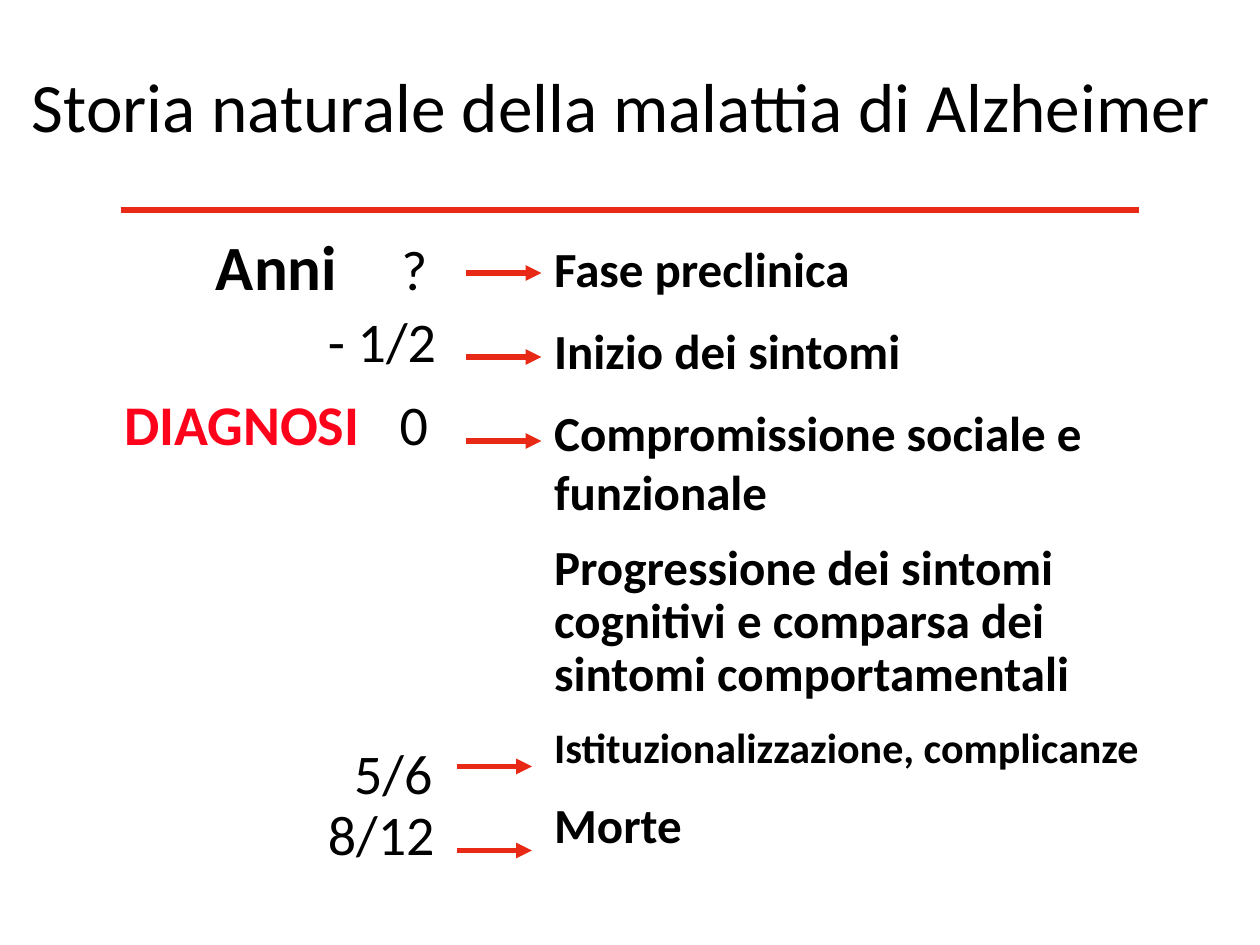
from dataclasses import dataclass

import pptx
import pptx.dml.color
import pptx.enum.shapes
import pptx.enum.text
import pptx.oxml.ns
import pptx.util
from lxml import etree

Pt = pptx.util.Pt


@dataclass(frozen=True)
class Theme:
    font: str = "Calibri"
    ink: str = "000000"
    alert: str = "FD031B"
    line: str = "E72915"
    title: float = 39.6
    head: float = 36
    year: float = 32
    phase: float = 28
    small: float = 24
    stroke: float = 3


THEME = Theme()


def color(code):
    return pptx.dml.color.RGBColor.from_string(code)


def add_node(parent, tag, **attrs):
    return etree.SubElement(parent, pptx.oxml.ns.qn(tag), attrs)


def add_box(slide, left, top, width, height):
    frame = slide.shapes.add_textbox(Pt(left), Pt(top), Pt(width), Pt(height)).text_frame
    frame.word_wrap = True
    return frame


def add_run(para, text, size, bold=False, ink=THEME.ink):
    run = para.add_run()
    run.text = text
    font = run.font
    font.name, font.size, font.bold = THEME.font, Pt(size), bold
    font.color.rgb = color(ink)


def add_para(frame, first, space):
    para = frame.paragraphs[0] if first else frame.add_paragraph()
    para.space_before = Pt(space)
    return para


def set_tabs(para, stops):
    tabs = add_node(para._p.get_or_add_pPr(), "a:tabLst")
    for stop in stops:
        add_node(tabs, "a:tab", pos=str(int(Pt(stop))), algn="l")


def add_line(slide, left, right, y, arrow=False):
    line = slide.shapes.add_connector(
        pptx.enum.shapes.MSO_CONNECTOR.STRAIGHT, Pt(left), Pt(y), Pt(right), Pt(y))
    line.line.color.rgb = color(THEME.line)
    line.line.width = Pt(THEME.stroke)
    if arrow:
        add_node(line.line._get_or_add_ln(), "a:tailEnd", type="triangle")
    add_node(line._element.spPr, "a:effectLst")


def add_title(slide, text):
    frame = add_box(slide, 0, 18, 719, 90)
    frame.vertical_anchor = pptx.enum.text.MSO_ANCHOR.MIDDLE
    para = add_para(frame, True, 0)
    para.alignment = pptx.enum.text.PP_ALIGN.CENTER
    para.line_spacing = 0.9
    add_run(para, text, THEME.title)


def add_phases(slide, phases):
    frame = add_box(slide, 309.6, 132.5, 384, 407)
    for i, (text, size, space, pitch) in enumerate(phases):
        para = add_para(frame, i == 0, space)
        para.line_spacing = pitch
        add_run(para, text, size, bold=True)


def add_years(slide, years):
    frame = add_box(slide, 58.3, 126.5, 208, 413)
    for i, (space, stops, runs) in enumerate(years):
        para = add_para(frame, i == 0, space)
        if i:
            para.line_spacing = Pt(34)
        set_tabs(para, stops)
        for run in runs:
            add_run(para, *run)


def main():
    deck = pptx.Presentation()
    deck.slide_width, deck.slide_height = Pt(720), Pt(540)
    slide = deck.slides.add_slide(deck.slide_layouts[6])
    year = THEME.year

    add_title(slide, "Storia naturale della malattia di Alzheimer ")
    add_phases(slide, [
        ("Fase preclinica", THEME.phase, 0, 1),
        ("Inizio dei sintomi", THEME.phase, 13.3, 1),
        ("Compromissione sociale e funzionale", THEME.phase, 13.3, 1),
        ("Progressione dei sintomi cognitivi e comparsa dei sintomi comportamentali",
         THEME.phase, 13.3, 0.9),
        ("Istituzionalizzazione, complicanze", THEME.small, 11, 1),
        ("Morte", THEME.phase, 13.3, 1),
    ])
    add_years(slide, [
        (0, (58, 164), [("\tAnni", THEME.head, True), ("\t?", year)]),
        (6.6, (122,), [("\t- 1/2", year)]),
        (13.4, (5.5, 163), [("\tDIAGNOSI", year, True, THEME.alert), ("\t0", year)]),
        (165, (137,), [("\t5/6", year)]),
        (1, (122,), [("\t8/12", year)]),
    ])
    for left, rows in ((266.4, (156, 204, 252)), (261, (438, 486))):
        for y in rows:
            add_line(slide, left, left + 43, y, arrow=True)
    add_line(slide, 69, 651, 120)
    deck.save("out.pptx")


if __name__ == "__main__":
    main()
